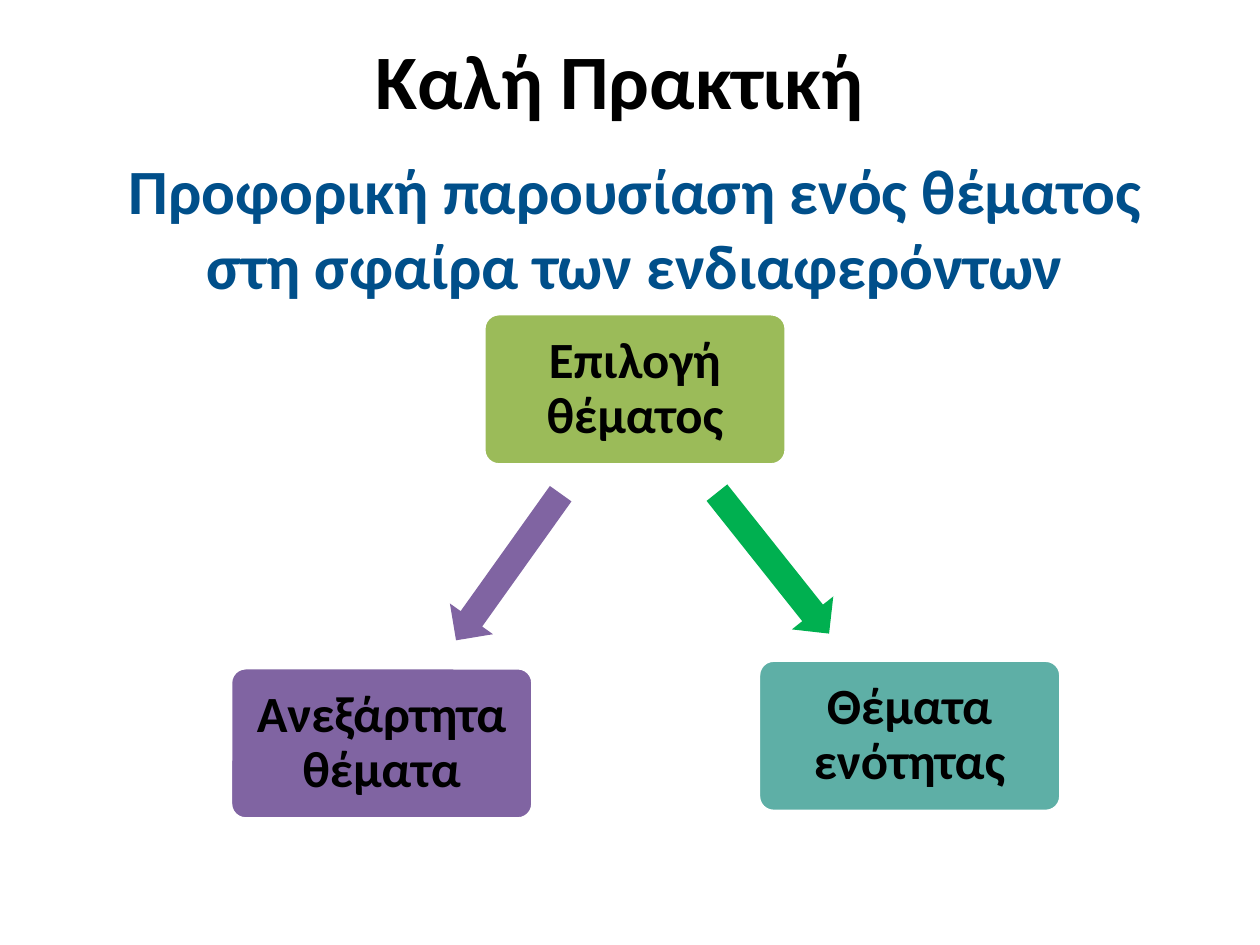
import pptx
import pptx.util
import pptx.dml.color
import pptx.enum.shapes
import pptx.enum.text

Pt = pptx.util.Pt
SHAPES = pptx.enum.shapes.MSO_SHAPE
ANCHOR = pptx.enum.text.MSO_ANCHOR

FONT = "Calibri"
HEADINGS = [
    ("Καλή Πρακτική ", (35.28, 0, 648, 90), 44, "000000", ANCHOR.MIDDLE),
    ("Προφορική παρουσίαση ενός θέματος στη σφαίρα των ενδιαφερόντων",
     (42.48, 82.8, 640.8, 94.32), 36, "004F8A", ANCHOR.TOP),
]
BOX_SIZE = (172.8, 86.4)
BOXES = [
    ("Επιλογή θέματος", (276.48, 179.28), "9BBB59"),
    ("Θέματα ενότητας", (433.44, 377.28), "5EAFA6"),
    ("Ανεξάρτητα θέματα", (131.76, 381.6), "8064A2"),
]
ARROW_SIZE = (102.96, 30.24)
ARROWS = [
    (SHAPES.RIGHT_ARROW, (390.24, 306.72), 51.5, "00B050"),
    (SHAPES.LEFT_ARROW, (239.04, 308.88), 305.5, "8064A2"),
]


def color(value):
    return pptx.dml.color.RGBColor.from_string(value)


def write(shape, text, size, font_color, anchor):
    frame = shape.text_frame
    frame.word_wrap = True
    frame.vertical_anchor = anchor
    paragraph = frame.paragraphs[0]
    paragraph.alignment = pptx.enum.text.PP_ALIGN.CENTER
    run = paragraph.add_run()
    run.text = text
    run.font.name = FONT
    run.font.size = Pt(size)
    run.font.bold = True
    run.font.color.rgb = color(font_color)
    return frame


def add_filled(slide, kind, position, size, fill):
    shape = slide.shapes.add_shape(kind, *map(Pt, position + size))
    shape.shadow.inherit = False
    shape.fill.solid()
    shape.fill.fore_color.rgb = color(fill)
    shape.line.fill.background()
    return shape


def add_box(slide, text, position, fill):
    box = add_filled(slide, SHAPES.ROUNDED_RECTANGLE, position, BOX_SIZE, fill)
    box.adjustments[0] = 0.1
    box.line.color.rgb = color("FFFFFF")
    box.line.width = Pt(2)
    frame = write(box, text, 29, "000000", ANCHOR.MIDDLE)
    frame.margin_left = frame.margin_right = Pt(8.64)
    frame.margin_top = frame.margin_bottom = Pt(8.64)
    frame.paragraphs[0].line_spacing = 0.9


def main():
    presentation = pptx.Presentation()
    presentation.slide_width = Pt(720)
    presentation.slide_height = Pt(540)
    slide = presentation.slides.add_slide(presentation.slide_layouts[6])
    for text, bounds, size, font_color, anchor in HEADINGS:
        heading = slide.shapes.add_textbox(*map(Pt, bounds))
        write(heading, text, size, font_color, anchor)
    for text, position, fill in BOXES:
        add_box(slide, text, position, fill)
    for kind, position, angle, fill in ARROWS:
        arrow = add_filled(slide, kind, position, ARROW_SIZE, fill)
        arrow.rotation = angle
    presentation.save("out.pptx")


if __name__ == "__main__":
    main()
